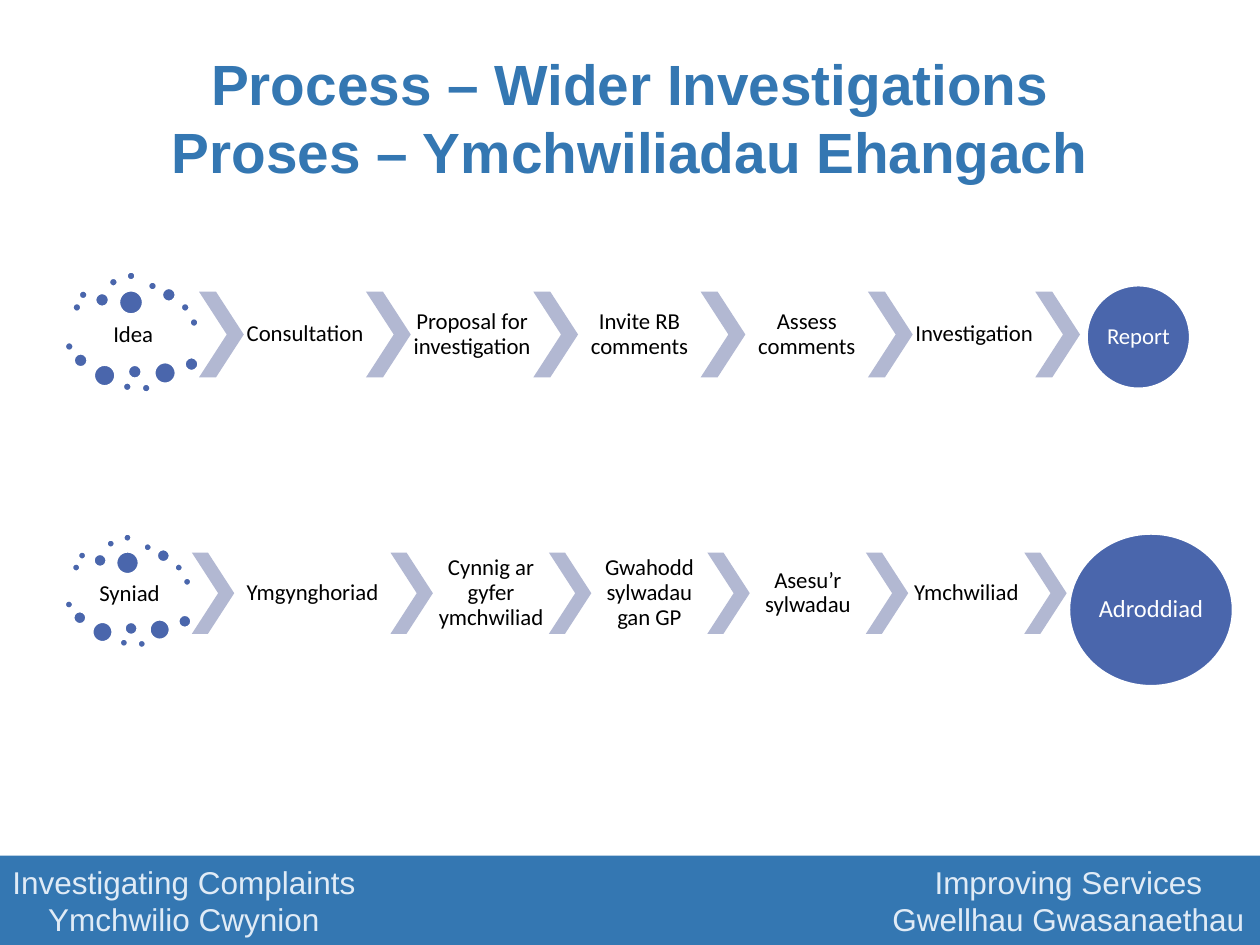
from typing import Any, NamedTuple

import pptx
import pptx.dml.color
import pptx.enum.shapes
import pptx.enum.text
import pptx.oxml
import pptx.oxml.ns
import pptx.util

Inches = pptx.util.Inches
Pt = pptx.util.Pt
RGBColor = pptx.dml.color.RGBColor
MSO_SHAPE = pptx.enum.shapes.MSO_SHAPE
PP_ALIGN = pptx.enum.text.PP_ALIGN
MSO_ANCHOR = pptx.enum.text.MSO_ANCHOR

BANNER_BLUE = RGBColor(0x34, 0x77, 0xB2)
BANNER_TEXT = RGBColor(0xE0, 0xEB, 0xF6)
DOT_BLUE = RGBColor(0x4A, 0x66, 0xAC)
CHEVRON_GREY = RGBColor(0xB2, 0xB8, 0xD2)
BLACK = RGBColor(0, 0, 0)
WHITE = RGBColor(0xFF, 0xFF, 0xFF)

ROW_LEFT = 0.51
CHEVRON_W, STEP_W, STEP_H = 0.355, 0.973, 0.68


class Box(NamedTuple):
    x: float
    y: float
    w: float
    h: float


class Dot(NamedTuple):
    x: float
    y: float
    size: float


class Process(NamedTuple):
    top: float
    scale: float
    idea: str
    steps: list[str]
    first_step_w: float
    result: str
    result_box: Box
    result_size: int


SMALL, MEDIUM, LARGE, LARGEST = 0.08, 0.12, 0.18, 0.2
# Offsets from the top left corner of the cloud, at full scale
CLOUD = [
    Dot(0.06, 0.25, SMALL), Dot(0.11, 0.15, SMALL), Dot(0.24, 0.17, MEDIUM),
    Dot(0.35, 0.05, SMALL), Dot(0.49, 0, SMALL), Dot(0.66, 0.08, SMALL),
    Dot(0.77, 0.13, MEDIUM), Dot(0.92, 0.25, SMALL), Dot(0.99, 0.37, SMALL),
    Dot(0.43, 0.15, LARGEST), Dot(0, 0.56, SMALL), Dot(0.07, 0.65, MEDIUM),
    Dot(0.23, 0.74, LARGE), Dot(0.46, 0.88, SMALL), Dot(0.5, 0.74, MEDIUM),
    Dot(0.61, 0.89, SMALL), Dot(0.71, 0.72, LARGE), Dot(0.95, 0.68, MEDIUM),
]

PROCESSES = [
    Process(2.15, 1, "Idea",
            ["Consultation", "Proposal for investigation", "Invite RB comments",
             "Assess comments", "Investigation"],
            0.97, "Report", Box(8.62, 2.26, 0.83, 0.83), 13),
    Process(4.23, 0.947, "Syniad",
            ["Ymgynghoriad", "Cynnig ar gyfer ymchwiliad", "Gwahodd sylwadau gan GP",
             "Asesu’r sylwadau", "Ymchwiliad"],
            1.24, "Adroddiad", Box(8.48, 4.23, 1.31, 1.22), 14),
]


def set_text(sp: Any, text: str, font: dict[str, Any], inset: float = 0.0,
             line_spacing: float | None = None) -> None:
    tf = sp.text_frame
    frame = dict.fromkeys(
        ("margin_left", "margin_top", "margin_right", "margin_bottom"), Inches(inset))
    frame |= {"word_wrap": True, "vertical_anchor": MSO_ANCHOR.MIDDLE}
    for name, value in frame.items():
        setattr(tf, name, value)
    tf.text = text
    for p in tf.paragraphs:
        p.alignment = PP_ALIGN.CENTER
        p.line_spacing = line_spacing
        for r in p.runs:
            for name, value in font.items():
                if name == "color":
                    r.font.color.rgb = value
                else:
                    setattr(r.font, name, value)


def add_shape(shapes: Any, kind: Any, box: Box, fill: RGBColor,
              outline: RGBColor | None = None) -> Any:
    sp = shapes.add_shape(kind, *map(Inches, box))
    sp.shadow.inherit = False
    sp.fill.solid()
    sp.fill.fore_color.rgb = fill
    if outline is None:
        sp.line.fill.background()
    else:
        sp.line.color.rgb = outline
        sp.line.width = Pt(2)
    return sp


def add_label(shapes: Any, box: Box, text: str) -> None:
    sp = shapes.add_textbox(*map(Inches, box))
    set_text(sp, text, {"name": "Calibri", "size": Pt(13), "color": BLACK}, 0.02, 0.9)


def add_process(s: Any, process: Process) -> None:
    """Draw the idea cloud, the chevrons with their steps, and the result circle."""
    shapes = s.shapes.add_group_shape().shapes
    k, top = process.scale, process.top
    add_label(shapes, Box(ROW_LEFT + 0.06 * k, top + 0.35 * k, STEP_W * k, 0.32 * k),
              process.idea)
    for dot in CLOUD:
        add_shape(shapes, MSO_SHAPE.OVAL,
                  Box(ROW_LEFT + dot.x * k, top + dot.y * k, dot.size * k, dot.size * k),
                  DOT_BLUE, WHITE)

    x, y = ROW_LEFT + 1.07 * k, top + 0.165 * k
    widths = [process.first_step_w] + [STEP_W * k] * (len(process.steps) - 1)
    for step, width in zip(process.steps + [""], widths + [0]):
        chevron = add_shape(shapes, MSO_SHAPE.CHEVRON,
                            Box(x, y, CHEVRON_W * k, STEP_H * k), CHEVRON_GREY)
        chevron.adjustments[0] = 0.62
        x += CHEVRON_W * k
        if step:
            add_label(shapes, Box(x, y, width, STEP_H * k), step)
        x += width

    circle = add_shape(shapes, MSO_SHAPE.OVAL, process.result_box, DOT_BLUE, WHITE)
    set_text(circle, process.result,
             {"name": "Calibri", "size": Pt(process.result_size), "color": WHITE}, 0, 0.9)


def add_banner(s: Any) -> None:
    """Draw the footer, its two columns centred on tab stops."""
    sp = add_shape(s.shapes, MSO_SHAPE.RECTANGLE, Box(0, 6.79, 10, 0.71), BANNER_BLUE)
    set_text(sp, "\tInvestigating Complaints\tImproving Services\n"
                 "\tYmchwilio Cwynion\tGwellhau Gwasanaethau",
             {"name": "Arial", "size": Pt(18), "color": BANNER_TEXT})
    for p in sp.text_frame.paragraphs:
        p.alignment = PP_ALIGN.LEFT
        tabs = pptx.oxml.parse_xml(f'<a:tabLst {pptx.oxml.ns.nsdecls("a")}/>')
        for stop in (1.46, 8.48):
            tabs.append(pptx.oxml.parse_xml(
                f'<a:tab {pptx.oxml.ns.nsdecls("a")} pos="{Inches(stop)}" algn="ctr"/>'))
        p._p.get_or_add_pPr().append(tabs)


def main() -> None:
    prs = pptx.Presentation()
    prs.slide_width, prs.slide_height = Inches(10), Inches(7.5)
    s = prs.slides.add_slide(prs.slide_layouts[6])
    add_banner(s)
    title = s.shapes.add_textbox(*map(Inches, Box(0.5, 0.3, 9, 1.25)))
    set_text(title, "Process – Wider Investigations\vProses – Ymchwiliadau Ehangach",
             {"name": "Arial", "size": Pt(32.4), "bold": True, "color": BANNER_BLUE}, 0.05)
    for process in PROCESSES:
        add_process(s, process)
    prs.save("out.pptx")


if __name__ == "__main__":
    main()
